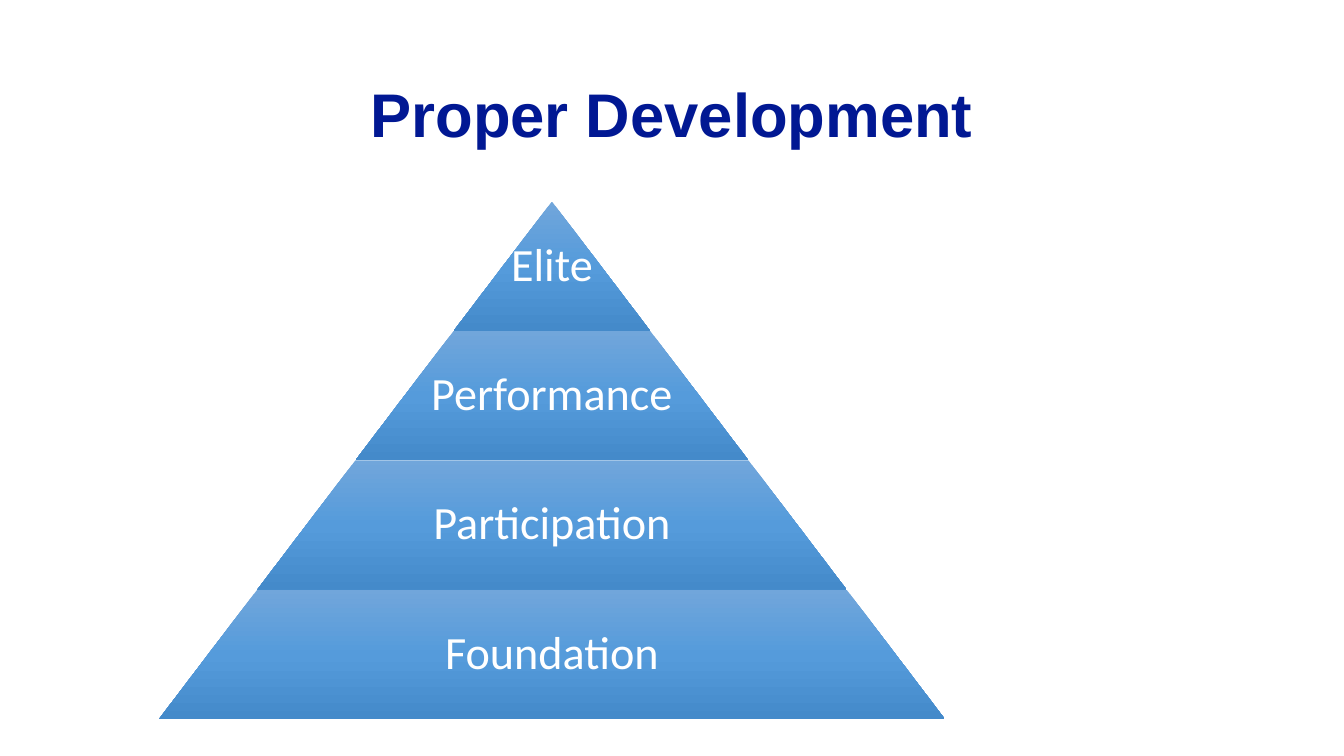
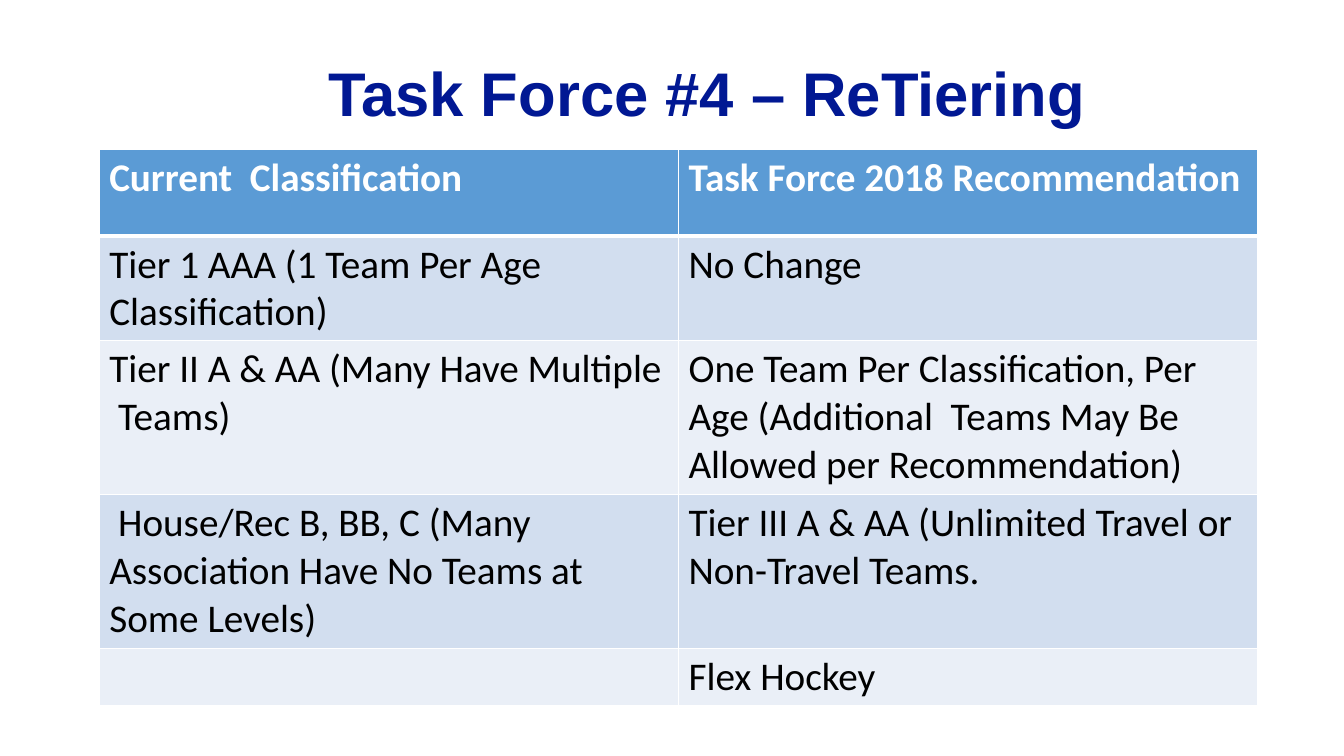
import copy
from typing import NamedTuple

import pptx
import pptx.dml.color
import pptx.enum.shapes
import pptx.enum.text
import pptx.oxml
import pptx.oxml.ns
import pptx.util

Cm = pptx.util.Cm
Pt = pptx.util.Pt
ALIGN = pptx.enum.text.PP_ALIGN
ANCHOR = pptx.enum.text.MSO_ANCHOR
qn = pptx.oxml.ns.qn

COLORS = {
    "title": "011893",
    "white": "FFFFFF",
    "black": "000000",
    "header": "5B9BD5",
    "band_dark": "D2DEEF",
    "band_light": "EAEFF7",
    "tier_top": "71A6DB",
    "tier_middle": "559BDB",
    "tier_bottom": "448ACA",
}
TITLE_FONT, BODY_FONT = "Arial", "Calibri"


class Box(NamedTuple):
    """Left, top, width and height in centimetres."""
    left: float
    top: float
    width: float
    height: float

    def lengths(self) -> tuple:
        return tuple(Cm(v) for v in self)


class Tier(NamedTuple):
    label: str
    text_share: float  # text width as a share of the tier's base


class Row(NamedTuple):
    current: str
    recommended: str
    height: float


def rgb(name: str) -> pptx.dml.color.RGBColor:
    return pptx.dml.color.RGBColor.from_string(COLORS[name])


def style(p, font: str, size: float, color: str, bold: bool = False) -> None:
    p.font.name, p.font.size, p.font.bold = font, Pt(size), bold
    p.font.color.rgb = rgb(color)


def add_text(s, box: Box, text: str, anchor, inset: float | None = None):
    """Add a centred text box and return its paragraph."""
    tf = s.shapes.add_textbox(*box.lengths()).text_frame
    tf.word_wrap = True
    tf.vertical_anchor = anchor
    if inset is not None:
        tf.margin_left = tf.margin_right = Cm(inset)
        tf.margin_top = tf.margin_bottom = Cm(inset)
    p = tf.paragraphs[0]
    p.text = text
    p.alignment = ALIGN.CENTER
    return p


def add_title(s, box: Box, text: str, anchor) -> None:
    style(add_text(s, box, text, anchor), TITLE_FONT, 44, "title", True)


# Pyramid
TIERS = [
    Tier("Elite", 1),
    Tier("Performance", 0.65),
    Tier("Participation", 0.65),
    Tier("Foundation", 0.65),
]
APEX_X, APEX_Y = 13.91, 5.08
TIER_HEIGHT, WIDTH_STEP = 3.26, 4.95


def fill_gradient(sp, names: list[str]) -> None:
    """Fill from top to bottom with evenly spaced colours."""
    sp.fill.gradient()
    sp.fill.gradient_angle = 270
    stops = sp.fill._xPr.find(".//" + qn("a:gsLst"))
    template = copy.deepcopy(stops[0])
    for stop in list(stops):
        stops.remove(stop)
    for i, name in enumerate(names):
        stop = copy.deepcopy(template)
        stop.set("pos", str(100000 * i // (len(names) - 1)))
        for child in list(stop):
            stop.remove(child)
        color = stop.makeelement(qn("a:srgbClr"), {"val": COLORS[name]})
        stop.append(color)
        stops.append(stop)


def add_tier(s, index: int, tier: Tier) -> None:
    width = WIDTH_STEP * (index + 1)
    top = APEX_Y + index * TIER_HEIGHT
    box = Box(APEX_X - width / 2, top, width, TIER_HEIGHT)
    sp = s.shapes.add_shape(pptx.enum.shapes.MSO_SHAPE.TRAPEZOID, *box.lengths())
    sp.adjustments[0] = WIDTH_STEP / 2 / TIER_HEIGHT
    sp.shadow.inherit = False
    sp.line.fill.background()
    fill_gradient(sp, ["tier_top", "tier_middle", "tier_bottom"])

    text_width = width * tier.text_share
    label_box = Box(APEX_X - text_width / 2, top, text_width, TIER_HEIGHT)
    p = add_text(s, label_box, tier.label, ANCHOR.MIDDLE, 0.12)
    p.line_spacing = 0.9
    style(p, BODY_FONT, 33, "white")


def build_pyramid(s) -> None:
    add_title(s, Box(2.33, 1.01, 29.21, 3.68), "Proper Development", ANCHOR.MIDDLE)
    for index, tier in enumerate(TIERS):
        add_tier(s, index, tier)


# Classification table
ROWS = [
    Row("Current  Classification", "Task Force 2018 Recommendation", 2.18),
    Row("Tier 1 AAA (1 Team Per Age Classification)", "No Change", 2.64),
    Row("Tier II A & AA (Many Have Multiple  Teams)",
        "One Team Per Classification, Per Age (Additional  Teams May Be "
        "Allowed per Recommendation)", 3.88),
    Row(" House/Rec B, BB, C (Many Association Have No Teams at Some Levels)",
        "Tier III A & AA (Unlimited Travel or Non-Travel Teams.", 3.88),
    Row("", "Flex Hockey", 1.45),
]
TABLE_LEFT, TABLE_TOP, COLUMN_WIDTH = 2.5, 3.76, 14.6


def set_border(cell, side: str, points: float) -> None:
    tc_pr = cell._tc.get_or_add_tcPr()
    tc_pr.append(pptx.oxml.parse_xml(
        f'<a:{side} xmlns:a="http://schemas.openxmlformats.org/drawingml/2006/main" '
        f'w="{Pt(points)}"><a:solidFill><a:srgbClr val="{COLORS["white"]}"/>'
        f"</a:solidFill></a:{side}>"))


def fill_cell(cell, text: str, row_index: int) -> None:
    header = row_index == 0
    top = 3 if row_index == 1 else 1
    bottom = 3 if header else 1
    for side, points in (("lnL", 1), ("lnR", 1), ("lnT", top), ("lnB", bottom)):
        set_border(cell, side, points)
    band = "band_dark" if row_index % 2 else "band_light"
    cell.fill.solid()
    cell.fill.fore_color.rgb = rgb("header" if header else band)
    if text:
        p = cell.text_frame.paragraphs[0]
        p.text = text
        style(p, BODY_FONT, 28, "white" if header else "black", header)


def build_classification(s) -> None:
    box = Box(TABLE_LEFT, TABLE_TOP, 2 * COLUMN_WIDTH, sum(r.height for r in ROWS))
    table = s.shapes.add_table(len(ROWS), 2, *box.lengths()).table
    for column in table.columns:
        column.width = Cm(COLUMN_WIDTH)
    for i, row in enumerate(ROWS):
        table.rows[i].height = Cm(row.height)
        for j, text in enumerate((row.current, row.recommended)):
            fill_cell(table.cell(i, j), text, i)
    add_title(s, Box(2.5, 1.27, 30.65, 2.9), "Task Force #4 – ReTiering", ANCHOR.TOP)


def main() -> None:
    prs = pptx.Presentation()
    prs.slide_width, prs.slide_height = Cm(33.87), Cm(19.05)
    for build in (build_pyramid, build_classification):
        build(prs.slides.add_slide(prs.slide_layouts[6]))
    prs.save("out.pptx")


if __name__ == "__main__":
    main()
